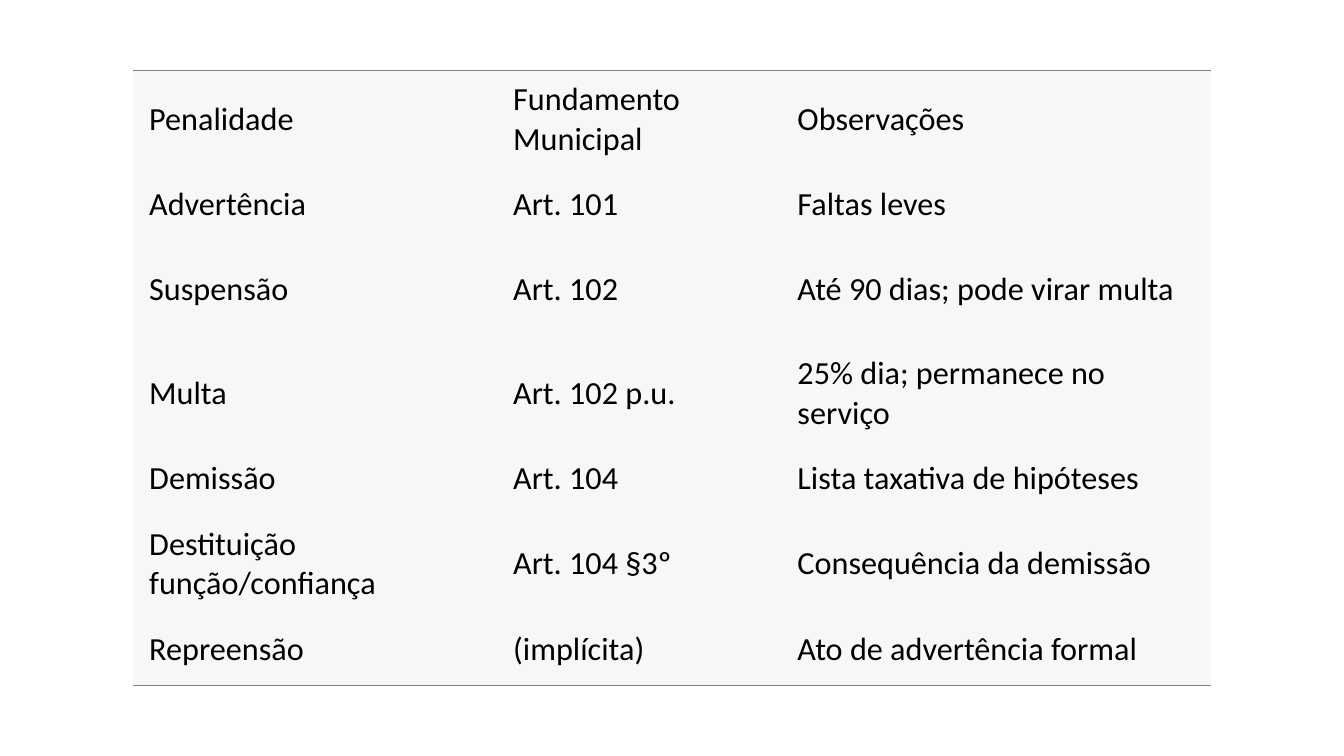
from lxml import etree
from pptx import Presentation
from pptx.dml.color import RGBColor
from pptx.enum.text import MSO_ANCHOR
from pptx.oxml.ns import qn
from pptx.util import Inches, Pt

MIDDLE = MSO_ANCHOR.MIDDLE
COLORS = {"text": "000000", "cell": "F7F7F7", "rule": "808080"}
FONT, TEXT_SIZE, RULE_WIDTH = "Calibri", Pt(23), Pt(1)
SLIDE_WIDTH, SLIDE_HEIGHT = Inches(13.33), Inches(7.5)
LEFT, TOP = Inches(1.32), Inches(0.7)
COLUMN_WIDTHS = [Inches(width) for width in (3.61, 2.82, 4.26)]
TALL, SHORT = Inches(1.03), Inches(0.66)
ROW_HEIGHTS = [TALL, SHORT, TALL, TALL, SHORT, TALL, SHORT]
PENALTIES = [
    ("Penalidade", "Fundamento Municipal", "Observações"),
    ("Advertência", "Art. 101", "Faltas leves"),
    ("Suspensão", "Art. 102", "Até 90 dias; pode virar multa"),
    ("Multa", "Art. 102 p.u.", "25% dia; permanece no serviço"),
    ("Demissão", "Art. 104", "Lista taxativa de hipóteses"),
    ("Destituição função/confiança", "Art. 104 §3º", "Consequência da demissão"),
    ("Repreensão", "(implícita)", "Ato de advertência formal"),
]


def set_borders(cell, ruled_sides):
    """Rule the given sides of a cell and clear the others."""
    properties = cell._tc.get_or_add_tcPr()
    for index, side in enumerate("LRTB"):
        line = etree.Element(qn(f"a:ln{side}"))
        if side in ruled_sides:
            line.set("w", str(RULE_WIDTH))
            fill = etree.SubElement(line, qn("a:solidFill"))
            etree.SubElement(fill, qn("a:srgbClr"), val=COLORS["rule"])
        else:
            etree.SubElement(line, qn("a:noFill"))
        properties.insert(index, line)


def fill_cell(cell, text, ruled_sides):
    """Write and style one table cell."""
    cell.text_frame.text = text
    cell.vertical_anchor = MIDDLE
    cell.margin_left = cell.margin_right = Inches(0.16)
    cell.margin_top, cell.margin_bottom = Inches(0.08), Inches(0.14)
    cell.fill.solid()
    cell.fill.fore_color.rgb = RGBColor.from_string(COLORS["cell"])
    font = cell.text_frame.paragraphs[0].runs[0].font
    font.name, font.size, font.bold = FONT, TEXT_SIZE, False
    font.color.rgb = RGBColor.from_string(COLORS["text"])
    set_borders(cell, ruled_sides)


def add_penalty_table(page):
    """Add the table of penalties, ruled above and below."""
    table = page.shapes.add_table(
        len(ROW_HEIGHTS), len(COLUMN_WIDTHS), LEFT, TOP,
        sum(COLUMN_WIDTHS), sum(ROW_HEIGHTS)).table
    table.first_row = table.horz_banding = False
    for column, width in zip(table.columns, COLUMN_WIDTHS):
        column.width = width
    outer_rules = {0: "T", len(PENALTIES) - 1: "B"}
    for index, (row, height) in enumerate(zip(table.rows, ROW_HEIGHTS)):
        row.height = height
        for cell, text in zip(row.cells, PENALTIES[index]):
            fill_cell(cell, text, outer_rules.get(index, ""))


def main():
    """Build and save the slide."""
    deck = Presentation()
    deck.slide_width, deck.slide_height = SLIDE_WIDTH, SLIDE_HEIGHT
    page = deck.slides.add_slide(deck.slide_layouts[6])
    add_penalty_table(page)
    deck.save("out.pptx")


if __name__ == "__main__":
    main()
